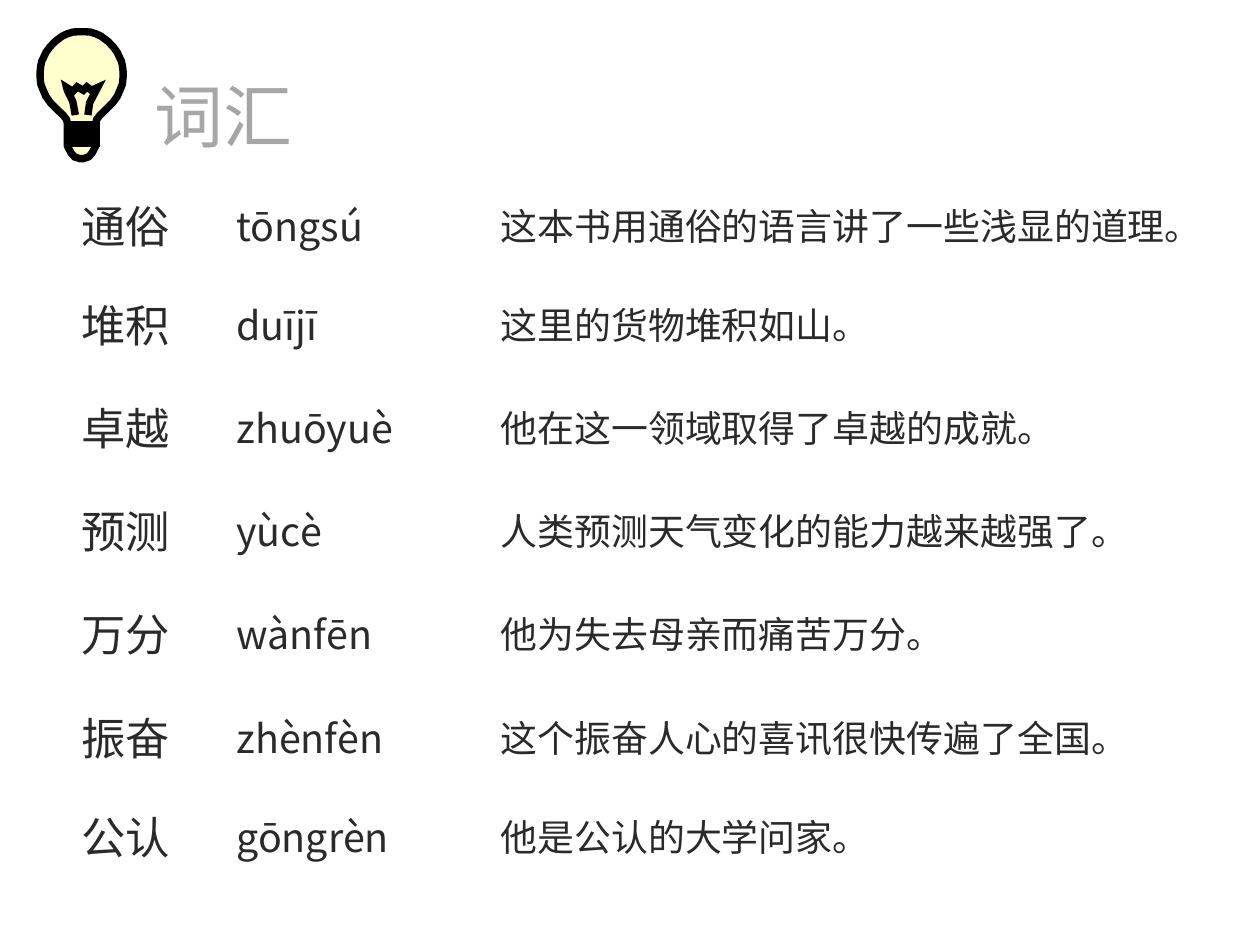
"""Build a Chinese vocabulary slide with words, pinyin and example sentences."""
from lxml import etree
from pptx import Presentation
from pptx.dml.color import RGBColor
from pptx.enum.lang import MSO_LANGUAGE_ID
from pptx.enum.text import MSO_ANCHOR
from pptx.oxml.ns import qn
from pptx.util import Cm, Pt

CHINESE = MSO_LANGUAGE_ID.SIMPLIFIED_CHINESE
TOP = MSO_ANCHOR.TOP
MIDDLE = MSO_ANCHOR.MIDDLE

NOTO = "Noto Sans CJK SC"
INK = "2A2A2B"
GREY = "A6A6A6"
BLACK = "000000"
CREAM = "FFFECC"

COLUMNS = [(2.18, 3.2, 36), (6.63, 5.3, 32), (14.2, 20.8, 30)]
HEIGHT = 1.55
ROWS = [
    (6.47, "通俗", "tōngsú", "这本书用通俗的语言讲了一些浅显的道理。"),
    (9.31, "堆积", "duījī", "这里的货物堆积如山。"),
    (12.28, "卓越", "zhuōyuè", "他在这一领域取得了卓越的成就。"),
    (15.23, "预测", "yùcè", "人类预测天气变化的能力越来越强了。"),
    (18.17, "万分", "wànfēn", "他为失去母亲而痛苦万分。"),
    (21.15, "振奋", "zhènfèn", "这个振奋人心的喜讯很快传遍了全国。"),
    (23.99, "公认", "gōngrèn", "他是公认的大学问家。"),
]

AXIS = 2.34
HALF = [
    (0.08, 0.91), (0.25, 0.92), (0.41, 0.97), (0.56, 1.04), (0.76, 1.19),
    (0.91, 1.35), (1.02, 1.5), (1.09, 1.65), (1.14, 1.75), (1.17, 1.88),
    (1.19, 2.06), (1.19, 2.21), (1.17, 2.41), (1.12, 2.54), (1.02, 2.77),
    (0.89, 2.95), (0.66, 3.18), (0.53, 3.3), (0.43, 3.43), (0.41, 3.53),
    (0.41, 4.17), (0.38, 4.24), (0.3, 4.39), (0.2, 4.5), (0.05, 4.55),
]
WIRE = [
    (-0.18, 3.3), (-0.25, 2.92), (-0.41, 2.59), (-0.43, 2.51),
    (-0.25, 2.62), (-0.13, 2.49), (0.05, 2.59), (0.15, 2.49),
    (0.28, 2.59), (0.46, 2.51), (0.23, 2.95), (0.18, 3.3),
]
SCREW = [
    (-0.41, 3.58), (0.41, 3.58), (0.41, 3.76), (-0.41, 3.76),
    (-0.41, 3.94), (0.41, 3.94), (0.41, 4.11), (-0.41, 4.11),
]


def color(code):
    """Turn a hex string into a colour."""
    return RGBColor.from_string(code)


def add_text(slide, box, text, size, font, code, inset, anchor):
    """Add a text box holding one run."""
    shape = slide.shapes.add_textbox(*map(Cm, box))
    frame = shape.text_frame
    frame.word_wrap = True
    frame.vertical_anchor = anchor
    frame.margin_left = frame.margin_right = Cm(inset)
    frame.margin_top = frame.margin_bottom = Cm(inset)
    run = frame.paragraphs[0].add_run()
    run.text = text
    run.font.size = Pt(size)
    run.font.name = font
    run.font.color.rgb = color(code)
    run.font.language_id = CHINESE
    latin = run.font._element.find(qn("a:latin"))
    asian = etree.Element(qn("a:ea"), typeface=font)
    latin.addnext(asian)


def add_row(slide, middle, *texts):
    """Add one word with its pinyin and sentence."""
    for (left, width, size), text in zip(COLUMNS, texts):
        box = (left, middle - HEIGHT / 2, width, HEIGHT)
        add_text(slide, box, text, size, NOTO, INK, 0.15, MIDDLE)


def add_path(group, strokes, closed, fill=None):
    """Add a freeform with a thick mitred outline."""
    paths = [[(Cm(AXIS + x), Cm(y)) for x, y in stroke] for stroke in strokes]
    pen = group.shapes.build_freeform(*paths[0][0], scale=1.0)
    pen.add_line_segments(paths[0][1:], close=closed)
    for path in paths[1:]:
        pen.move_to(*path[0])
        pen.add_line_segments(path[1:], close=closed)
    shape = pen.convert_to_shape()
    shape.shadow.inherit = False
    if fill:
        shape.fill.solid()
        shape.fill.fore_color.rgb = color(fill)
    else:
        shape.fill.background()
    shape.line.color.rgb = color(BLACK)
    shape.line.width = Pt(6)
    line = shape._element.spPr.find(qn("a:ln"))
    etree.SubElement(line, qn("a:miter"), lim="800000")


def add_bulb(slide):
    """Add the light bulb from its mirrored half, wire and screw."""
    group = slide.shapes.add_group_shape()
    mirror = [(-x, y) for x, y in reversed(HALF)]
    add_path(group, [HALF + mirror], True, CREAM)
    add_path(group, [WIRE, SCREW], False)


def main():
    """Build and save the slide."""
    deck = Presentation()
    deck.slide_width = Cm(36.12)
    deck.slide_height = Cm(27.1)
    slide = deck.slides.add_slide(deck.slide_layouts[6])
    title = (4.24, 1.93, 31.88, 3.12)
    add_text(slide, title, "词汇", 56, "Roboto", GREY, 0.18, TOP)
    add_bulb(slide)
    for row in ROWS:
        add_row(slide, *row)
    deck.save("out.pptx")


if __name__ == "__main__":
    main()
